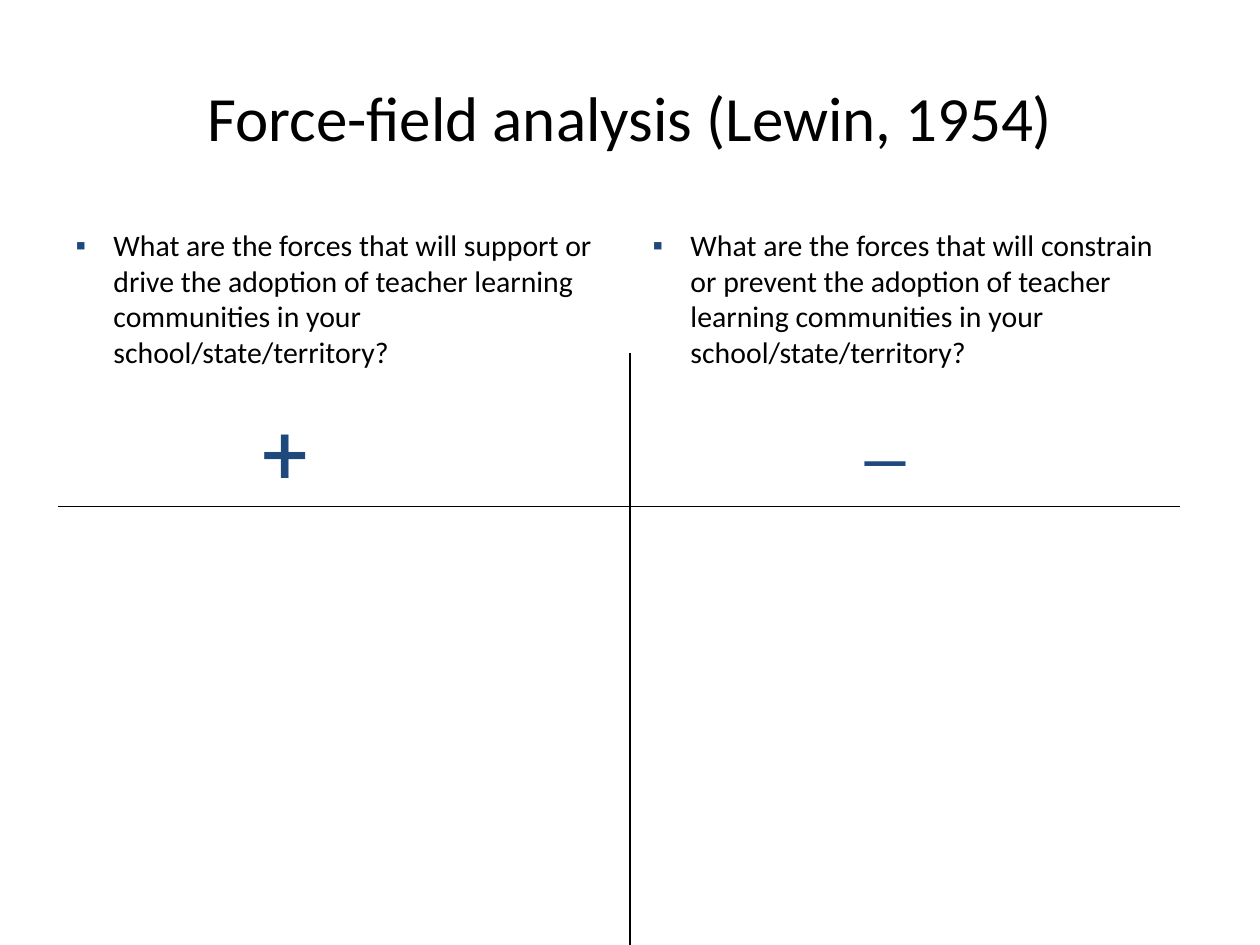
from dataclasses import dataclass
from lxml.etree import SubElement
from pptx import Presentation
from pptx.dml.color import RGBColor
from pptx.enum.shapes import MSO_CONNECTOR as Connector
from pptx.enum.text import MSO_ANCHOR as Anchor, MSO_AUTO_SIZE as AutoSize, PP_ALIGN as Align
from pptx.oxml.ns import qn
from pptx.util import Pt


@dataclass
class Theme:
    ink: str = "000000"
    accent: str = "1F497D"
    text_font: str = "Calibri"
    sign_font: str = "Roboto"
    title: int = 36
    question: int = 17
    plus: int = 48
    minus: int = 36


theme = Theme()


def place(shape, left, top, width, height):
    shape.left, shape.top = Pt(left), Pt(top)
    shape.width, shape.height = Pt(width), Pt(height)


def style(paragraph, font, size, color):
    paragraph.font.name = font
    paragraph.font.size = Pt(size)
    paragraph.font.color.rgb = RGBColor.from_string(color)


deck = Presentation()
deck.slide_width, deck.slide_height = Pt(720), Pt(540)
slide = deck.slides.add_slide(deck.slide_layouts[3])

title = slide.shapes.title
place(title, 36, 21.6, 648, 90)
title.text_frame.text = "Force-field analysis (Lewin, 1954)"
title.text_frame.vertical_anchor = Anchor.MIDDLE
heading = title.text_frame.paragraphs[0]
heading.alignment = Align.CENTER
style(heading, theme.text_font, theme.title, theme.ink)

questions = [
    (1, 36, "support or drive"),
    (2, 365.75, "constrain or prevent"),
]
for index, left, effect in questions:
    column = slide.placeholders[index]
    place(column, left, 126, 318.25, 356.4)
    column.text_frame.text = (
        f"What are the forces that will {effect} the adoption of teacher "
        "learning communities in your school/state/territory?"
    )
    question = column.text_frame.paragraphs[0]
    style(question, theme.text_font, theme.question, theme.ink)
    question.space_before = Pt(3.4)
    properties = question._p.get_or_add_pPr()
    properties.set("marL", str(Pt(21.6)))
    properties.set("indent", str(-Pt(21.6)))
    bullet_color = SubElement(properties, qn("a:buClr"))
    SubElement(bullet_color, qn("a:srgbClr"), val=theme.accent)
    SubElement(properties, qn("a:buFont"), typeface="Arial")
    SubElement(properties, qn("a:buChar"), char="▪")

axes = [(33, 289.5, 674.5, 289.5), (360, 201.5, 360, 540)]
for ends in axes:
    axis = slide.shapes.add_connector(Connector.STRAIGHT, *map(Pt, ends))
    axis.line.color.rgb = RGBColor.from_string(theme.ink)
    axis.line.width = Pt(1)
    SubElement(axis._element.spPr, qn("a:effectLst"))

signs = [
    ("+", theme.plus, (142.5, 225.5, 84, 65), True, 24),
    ("—", theme.minus, (484.5, 238.5, 52, 51), False, 0),
]
for symbol, size, box, wraps, gap in signs:
    sign = slide.shapes.add_textbox(*map(Pt, box))
    sign.text_frame.word_wrap = wraps
    sign.text_frame.auto_size = AutoSize.SHAPE_TO_FIT_TEXT
    sign.text_frame.text = symbol
    mark = sign.text_frame.paragraphs[0]
    mark.space_before = Pt(gap)
    style(mark, theme.sign_font, size, theme.accent)

deck.save("out.pptx")
